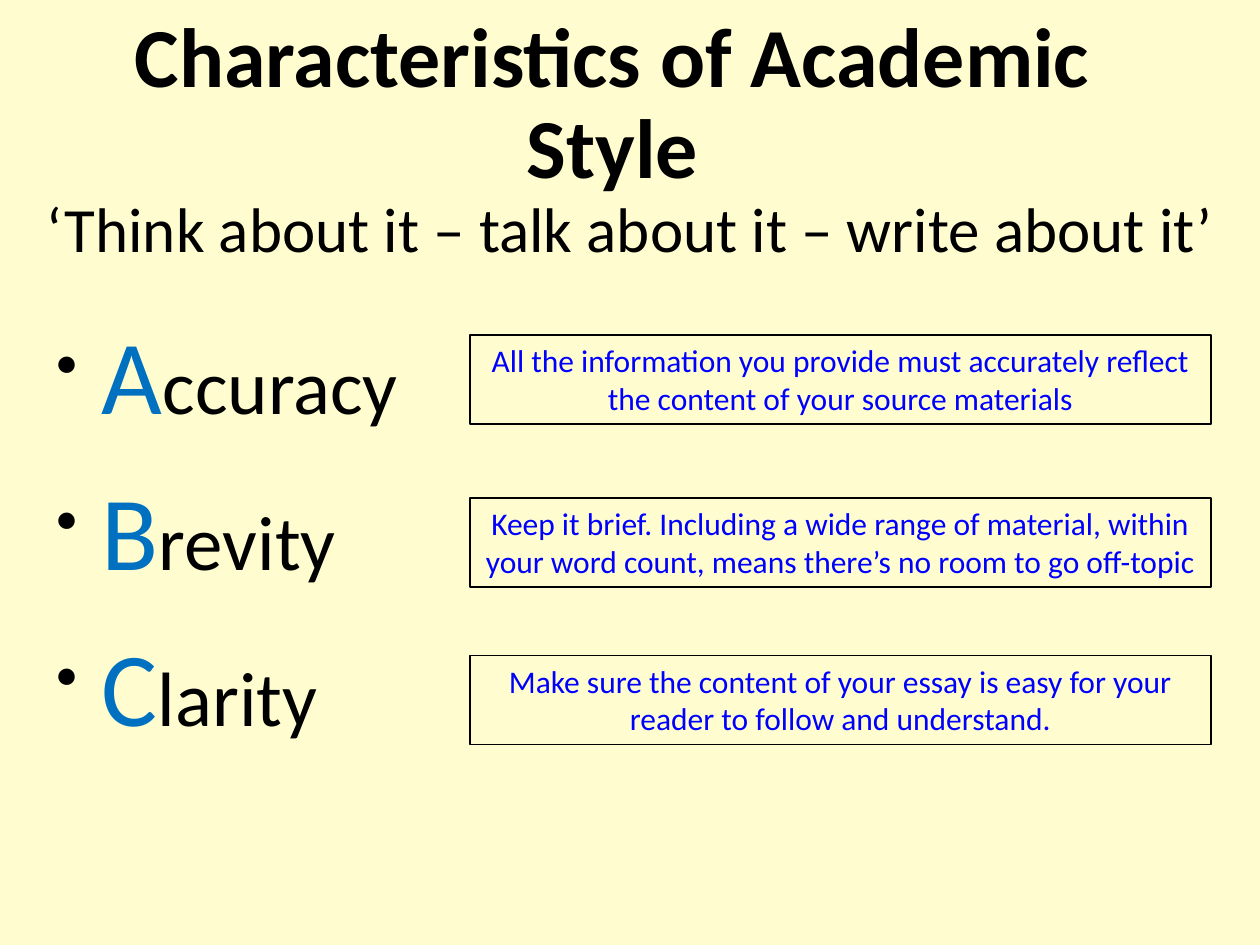
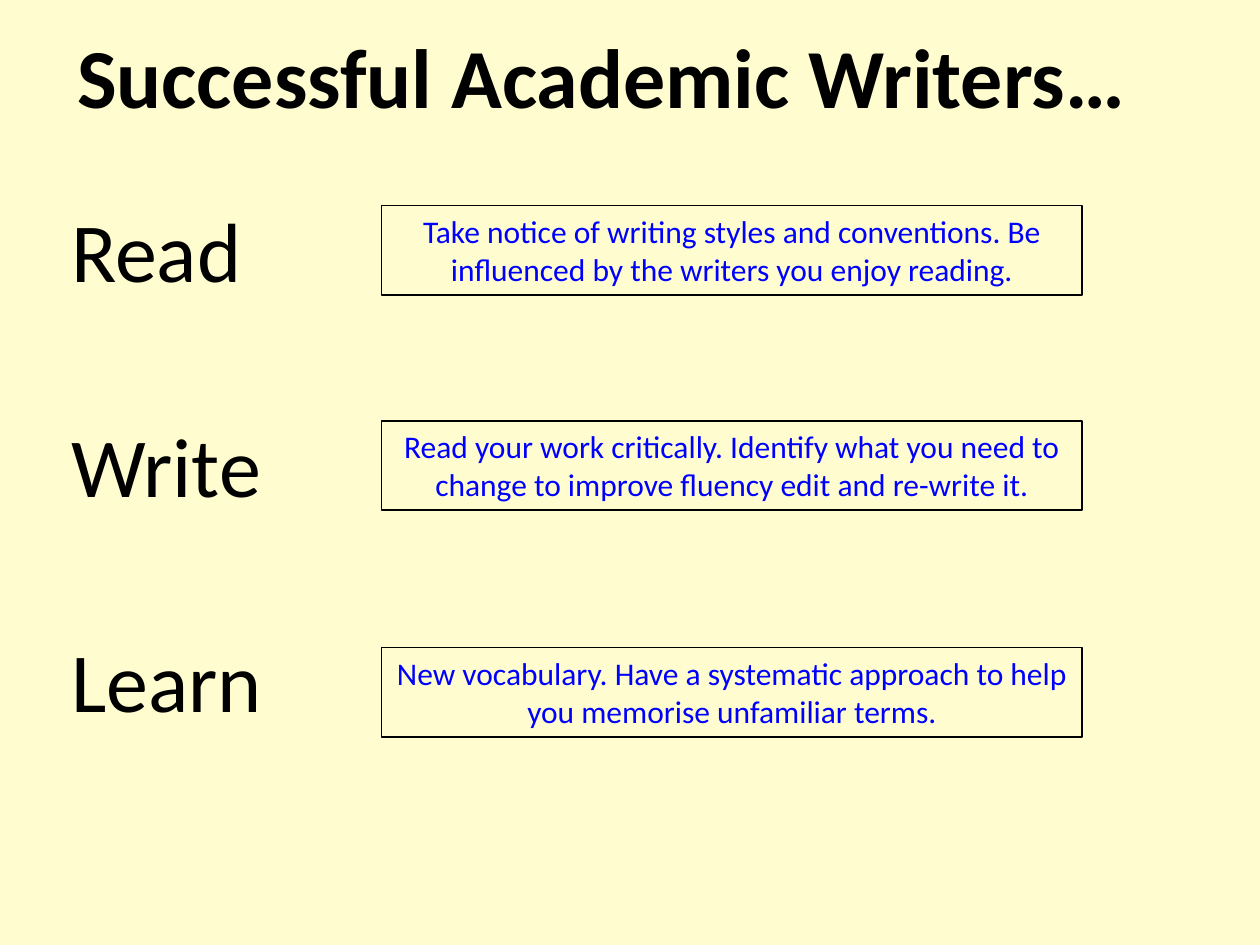
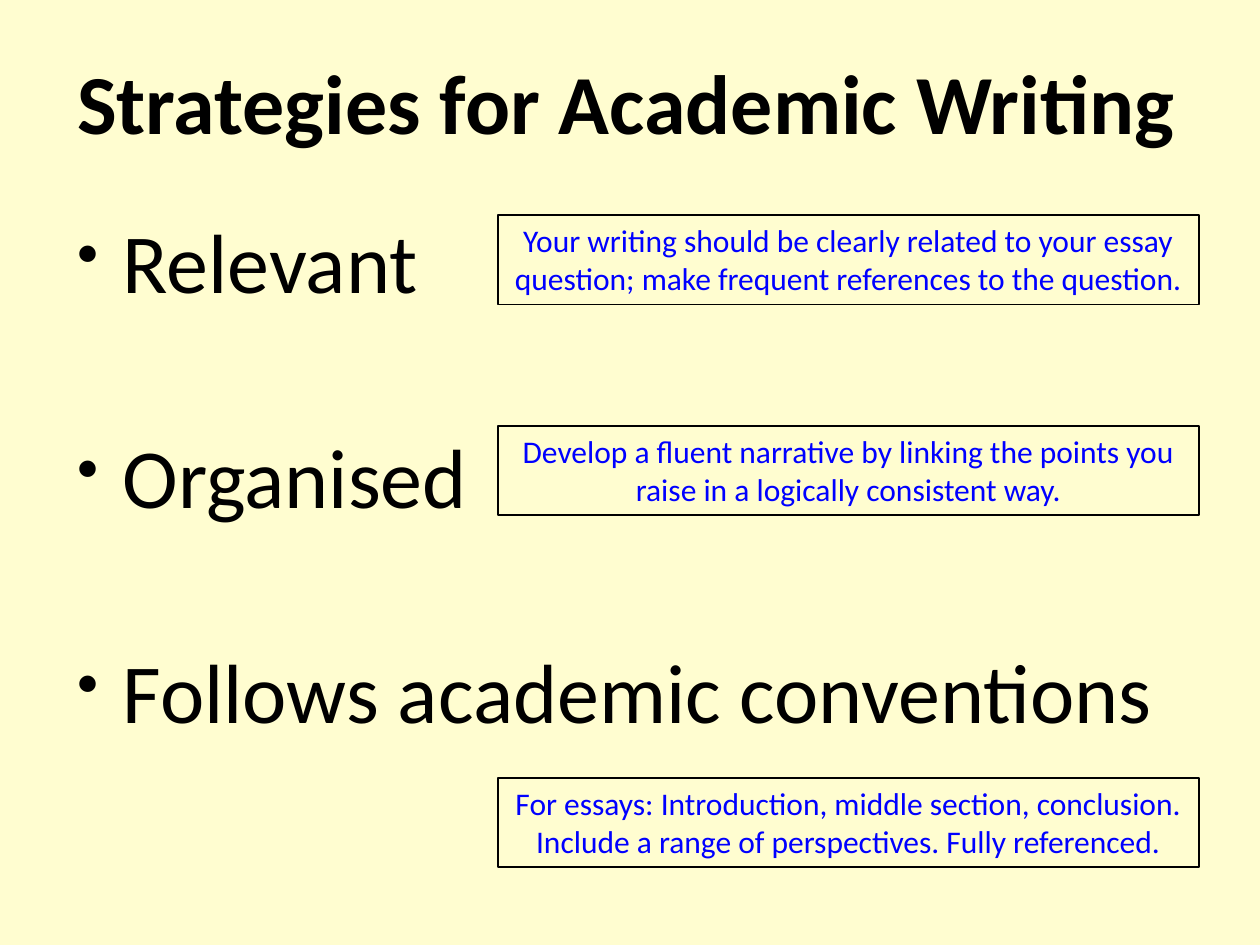
from dataclasses import dataclass

from lxml import etree
from pptx import Presentation
from pptx.dml.color import RGBColor
from pptx.enum.shapes import MSO_SHAPE
from pptx.enum.text import MSO_ANCHOR, MSO_AUTO_SIZE, PP_ALIGN
from pptx.oxml.ns import qn
from pptx.util import Pt

RECT = MSO_SHAPE.RECTANGLE
TOP, MIDDLE = MSO_ANCHOR.TOP, MSO_ANCHOR.MIDDLE
FIT = MSO_AUTO_SIZE.SHAPE_TO_FIT_TEXT
LEFT, CENTER = PP_ALIGN.LEFT, PP_ALIGN.CENTER


@dataclass(frozen=True)
class Theme:
    """Colours, font and type sizes of the deck."""

    font: str = "Calibri"
    cream: RGBColor = RGBColor(0xFF, 0xFD, 0xD0)
    black: RGBColor = RGBColor(0, 0, 0)
    initial: RGBColor = RGBColor(0, 0x70, 0xC0)
    note: RGBColor = RGBColor(0, 0, 0xFF)
    initial_size: int = 60
    head_size: int = 48
    word_size: int = 44
    lead_size: int = 36
    note_size: int = 18
    note_height: int = 51


class Deck:
    """Holds the style and the current slide."""

    def __init__(self, theme):
        """Start an empty 10 by 7.5 inch presentation."""
        self.theme = theme
        self.prs = Presentation()
        self.prs.slide_width, self.prs.slide_height = Pt(720), Pt(540)

    def slide(self):
        """Add a blank slide with the shared background."""
        self.s = self.prs.slides.add_slide(self.prs.slide_layouts[6])
        fill = self.s.background.fill
        fill.solid()
        fill.fore_color.rgb = self.theme.cream

    def textbox(self, box, anchor=TOP):
        """Add a wrapping text box and return its frame."""
        tf = self.s.shapes.add_textbox(*map(Pt, box)).text_frame
        tf.word_wrap, tf.vertical_anchor = True, anchor
        return tf

    def run(self, p, text, size, color=None, bold=False):
        """Add a formatted run to a paragraph."""
        r = p.add_run()
        r.text = text
        r.font.color.rgb = color or self.theme.black
        for name, value in {"name": self.theme.font, "size": Pt(size), "bold": bold}.items():
            setattr(r.font, name, value)

    def title(self, text, box, align=LEFT):
        """Add the bold slide title."""
        p = self.textbox(box, MIDDLE).paragraphs[0]
        p.alignment, p.line_spacing = align, 0.9
        self.run(p, text, self.theme.head_size, bold=True)

    def subtitle(self, text, box):
        """Add a centred line below the title."""
        p = self.textbox(box).paragraphs[0]
        p.alignment = CENTER
        self.run(p, text, self.theme.lead_size)

    def items(self, rows, box, gap, spacing=0.9, indent=18, bullet=True):
        """Add evenly spaced paragraphs, each a list of run arguments."""
        tf = self.textbox(box)
        for i, row in enumerate(rows):
            p = tf.add_paragraph() if i else tf.paragraphs[0]
            p.line_spacing, p.space_before = spacing, Pt(gap if i else 0)
            pPr = p._p.get_or_add_pPr()
            pPr.set("marL", str(Pt(indent)))
            if bullet:
                pPr.set("indent", str(-Pt(indent)))
                etree.SubElement(pPr, qn("a:buChar")).set("char", "•")
                self.run(p, " ", self.theme.lead_size)
            for args in row:
                self.run(p, *args)

    def notes(self, left, width, rows):
        """Add outlined explanation boxes from pairs of top and text."""
        for top, text in rows:
            sp = self.s.shapes.add_shape(RECT, *map(Pt, (left, top, width, self.theme.note_height)))
            sp.shadow.inherit = False
            sp.fill.background()
            sp.line.color.rgb, sp.line.width = self.theme.black, Pt(1)
            tf = sp.text_frame
            for name, value in {"word_wrap": True, "auto_size": FIT, "vertical_anchor": TOP}.items():
                setattr(tf, name, value)
            p = tf.paragraphs[0]
            p.alignment = CENTER
            self.run(p, text, self.theme.note_size, self.theme.note)


def main():
    """Build the three slides and save them."""
    theme = Theme()
    deck = Deck(theme)

    deck.slide()
    words = [[(w[0], theme.initial_size, theme.initial), (w[1:], theme.word_size)]
             for w in ("Accuracy", "Brevity", "Clarity")]
    deck.items(words, (25, 173.5, 648, 325), gap=17, spacing=1.0)
    deck.title("Characteristics of Academic Style", (20, 4.5, 660, 112), CENTER)
    deck.subtitle("‘Think about it – talk about it – write about it’", (0, 104.5, 720, 51))
    deck.notes(268.5, 423.5, [
        (191.5, "All the information you provide must accurately reflect the content of your source materials"),
        (284.5, "Keep it brief. Including a wide range of material, within your word count, "
                "means there’s no room to go off-topic"),
        (374.5, "Make sure the content of your essay is easy for your reader to follow and understand."),
    ])

    deck.slide()
    words = [[(w, theme.head_size)] for w in ("Read", "Write", "Learn")]
    deck.items(words, (25, 116.5, 648, 357), gap=71, indent=8.6, bullet=False)
    deck.title("Successful Academic Writers…", (37, 9.5, 648, 73.5))
    deck.notes(218, 400.5, [
        (117.5, "Take notice of writing styles and conventions. Be influenced by the writers you enjoy reading."),
        (240.5, "Read your work critically. Identify what you need to change to improve fluency edit and re-write it."),
        (370, "New vocabulary. Have a systematic approach to help you memorise unfamiliar terms."),
    ])

    deck.slide()
    words = [[(w, theme.head_size)] for w in ("Relevant", "Organised", "Follows academic conventions")]
    deck.items(words, (37, 123, 648, 380), gap=71)
    deck.title("Strategies for Academic Writing", (37, 24.5, 648, 73.5))
    deck.notes(284.5, 400.5, [
        (123, "Your writing should be clearly related to your essay question; "
              "make frequent references to the question."),
        (243.5, "Develop a fluent narrative by linking the points you raise in a logically consistent way."),
        (444.5, "For essays: Introduction, middle section, conclusion. "
                "Include a range of perspectives. Fully referenced."),
    ])

    deck.prs.save("out.pptx")


if __name__ == "__main__":
    main()
